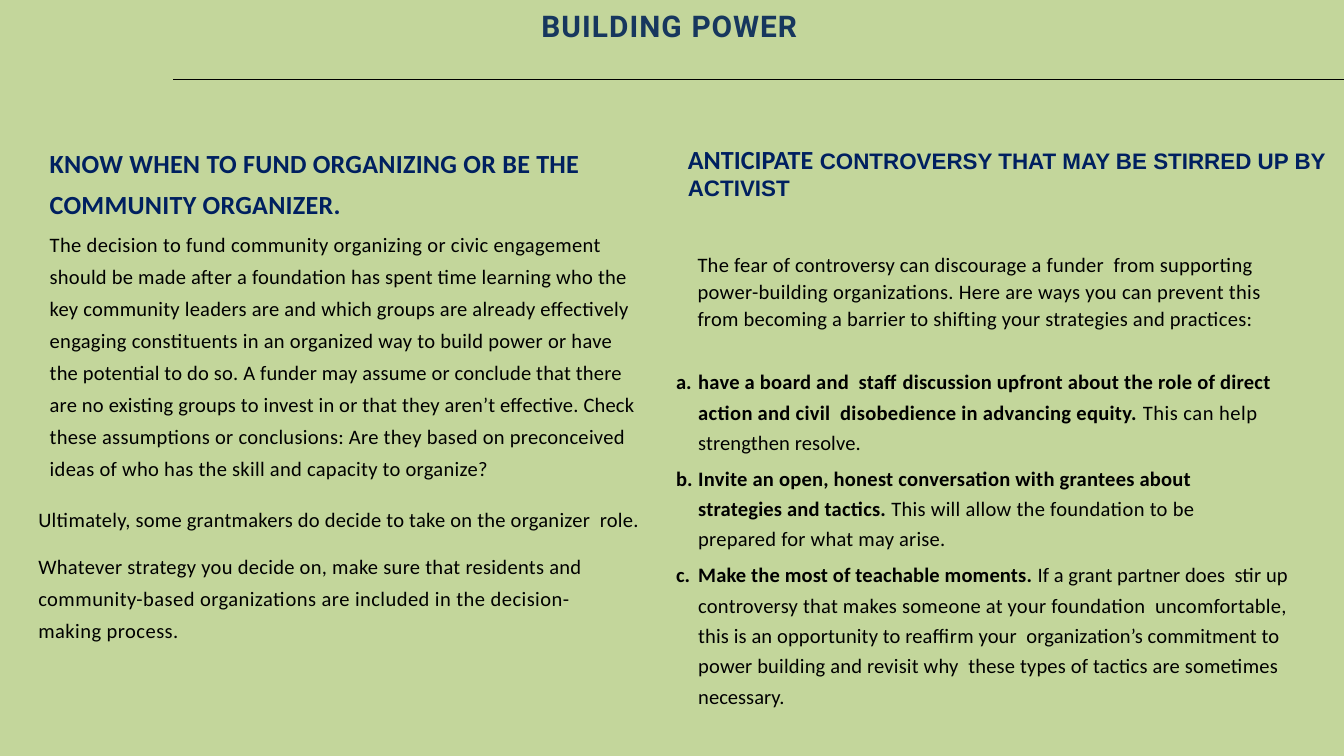
from dataclasses import dataclass
from typing import Optional

from lxml.etree import SubElement
from pptx import Presentation
from pptx.dml.color import RGBColor
from pptx.enum.shapes import MSO_CONNECTOR as Connector, MSO_SHAPE as Preset
from pptx.enum.text import MSO_AUTO_SIZE as AutoSize, PP_ALIGN as Align
from pptx.oxml.ns import qn
from pptx.util import Inches, Length, Pt

COLUMNS, ROWS = 100, 56.25
CELL = Inches(0.1)
COLORS = {
    "background": "C3D69B",
    "title": "17375E",
    "heading": "002060",
    "body": "000000",
}


@dataclass(frozen=True)
class Style:
    font: str
    size: float
    color: str
    bold: bool = False


@dataclass(frozen=True)
class Phrase:
    text: str
    spacing: float
    style: Style


@dataclass(frozen=True)
class TextParagraph:
    phrases: list[Phrase]
    line_spacing: float | Length = 1.0
    before: float = 0
    indent: float = 0.05
    hanging: float = 0
    right: float = 0
    lettered: bool = False


@dataclass(frozen=True)
class Block:
    column: float
    row: float
    columns: float
    rows: float
    paragraphs: list[TextParagraph]
    fill: Optional[str] = None
    inset: bool = False
    wrap: bool = True


TITLE = Style("Roboto", 16, "title", True)
HEADING = Style("Calibri", 14, "heading", True)
HEADING_SMALL = Style("Arial", 12, "heading", True)
BODY = Style("Calibri", 11, "body")
STRONG = Style("Calibri", 11, "body", True)


def body(*parts: tuple[str, float]) -> list[Phrase]:
    return [Phrase(text, spacing, BODY) for text, spacing in parts]


def strong(*parts: tuple[str, float]) -> list[Phrase]:
    return [Phrase(text, spacing, STRONG) for text, spacing in parts]


def lettered(phrases: list[Phrase], before: float = 3, right: float = 0) -> TextParagraph:
    return TextParagraph(phrases, 1.23, before, 1.75, -1.65, right, True)


BLOCKS = [
    Block(2.8, 37.1, 48, 2.3, [
        TextParagraph(body(
            ("Ultimately, some grantmakers do decide to take on the organizer  role.", 0.1),
        ), 1.3, 0.6),
    ]),
    Block(2.8, 40.6, 44.2, 7.2, [
        TextParagraph(body(
            ("Whatever strategy you decide on, make sure that residents and ", 0.13),
            ("community-based organizations are included in the decision- ", 0.23),
            ("making process.", 0.23),
        ), 1.3, 0.7, right=2),
    ]),
    Block(50.2, 26.95, 47.2, 25.8, [
        lettered(
            strong(
                ("have a board and  staff discussion upfront about the role of direct ", 0.1),
                ("action and civil  disobedience in advancing equity. ", 0.15),
            ) + body(("This can help ", 0.25), ("strengthen resolve.", 0.05)),
            before=0.7,
        ),
        lettered(
            strong(
                ("Invite an open, honest conversation with grantees about ", 0.1),
                ("strategies and tactics. ", 0.08),
            ) + body(
                ("This will allow the foundation to be ", 0.14),
                ("prepared for what may arise.", 0.1),
            ),
            right=5,
        ),
        lettered(
            strong(("Make the most of teachable moments. ", 0.05)) + body(
                ("If a grant partner does  stir up ", 0.03),
                ("controversy that makes someone at your foundation  uncomfortable, ", 0.1),
                ("this is an opportunity to reaffirm your  organization’s commitment to ", 0.07),
                ("power building and revisit why  these types of tactics are sometimes ", 0.09),
                ("necessary.", 0),
            ),
        ),
    ]),
    Block(1.8, 10.2, 46.1, 25.9, [
        TextParagraph([
            Phrase("KNOW WHEN TO FUND ORGANIZING OR BE THE COMMUNITY ORGANIZER.", 0.1, HEADING),
        ], 1.3, 2.5, 1.9),
        TextParagraph(body(
            ("The decision to fund community organizing or civic engagement ", 0.17),
            ("should be made after a foundation has spent time learning who the ", 0.1),
            ("key community leaders are and which groups are already effectively ", 0.11),
            ("engaging constituents in an organized way to build power or have ", 0.14),
            ("the potential to do so. A funder may assume or conclude that there ", 0.09),
            ("are no existing groups to invest in or that they aren’t effective. Check ", 0.09),
            ("these assumptions or conclusions: Are they based on preconceived ", 0.13),
            ("ideas of who has the skill and capacity to organize?", 0.15),
        ), 1.3, 2.5, 1.9, right=0.5),
    ]),
    Block(50, 18.5, 44.2, 6.1, [
        TextParagraph(body(
            ("The fear of controversy can discourage a funder  from supporting ", 0.11),
            ("power-building organizations. Here are ways you can prevent this ", 0.16),
            ("from becoming a barrier to shifting your strategies and practices:", 0.11),
        ), 1.09, 0.7, 1.9),
    ], fill="background"),
    Block(50.2, 10.15, 50, 5.4, [
        TextParagraph([
            Phrase("ANTICIPATE", 0, HEADING),
            Phrase(" CONTROVERSY THAT MAY BE STIRRED UP BY ACTIVIST", 0, HEADING_SMALL),
        ], indent=0),
    ], inset=True),
    Block(39.2, 1.25, 22, 2.8, [
        TextParagraph([
            Phrase("BUILDING ", 0.6, TITLE),
            Phrase("POWER", 0.5, TITLE),
        ], Pt(10.8), 0.7, 0.1),
    ], inset=True, wrap=False),
]


def cells(count: float) -> int:
    return round(count * CELL)


def color(name: str) -> RGBColor:
    return RGBColor.from_string(COLORS[name])


def add_phrase(paragraph, phrase: Phrase) -> None:
    run = paragraph.add_run()
    run.text = phrase.text
    run.font.name = phrase.style.font
    run.font.size = Pt(phrase.style.size)
    run.font.bold = phrase.style.bold
    run.font.color.rgb = color(phrase.style.color)
    run._r.get_or_add_rPr().set("spc", str(round(phrase.spacing * 100)))


def fill_paragraph(paragraph, content: TextParagraph) -> None:
    paragraph.alignment = Align.LEFT
    paragraph.line_spacing = content.line_spacing
    paragraph.space_before = Pt(content.before)
    properties = paragraph._p.get_or_add_pPr()
    properties.set("marL", str(cells(content.indent)))
    properties.set("marR", str(cells(content.right)))
    properties.set("indent", str(cells(content.hanging)))
    if content.lettered:
        SubElement(properties, qn("a:buAutoNum")).set("type", "alphaLcPeriod")
    for phrase in content.phrases:
        add_phrase(paragraph, phrase)


def add_block(slide, block: Block) -> None:
    place = [cells(n) for n in (block.column, block.row, block.columns, block.rows)]
    if block.fill:
        shape = slide.shapes.add_shape(Preset.RECTANGLE, *place)
        shape.shadow.inherit = False
        shape.fill.solid()
        shape.fill.fore_color.rgb = color(block.fill)
        shape.line.fill.background()
    else:
        shape = slide.shapes.add_textbox(*place)
    frame = shape.text_frame
    frame.word_wrap = block.wrap
    frame.auto_size = AutoSize.SHAPE_TO_FIT_TEXT
    if not block.inset:
        frame.margin_left = frame.margin_right = frame.margin_bottom = 0
        frame.margin_top = Inches(0.01)
    for index, content in enumerate(block.paragraphs):
        paragraph = frame.add_paragraph() if index else frame.paragraphs[0]
        fill_paragraph(paragraph, content)


def add_rule(slide, start: float, end: float, row: float) -> None:
    rule = slide.shapes.add_connector(
        Connector.STRAIGHT, cells(start), cells(row), cells(end), cells(row))
    rule.line.color.rgb = color("body")
    rule.line.width = Pt(0.5)
    SubElement(rule._element.spPr, qn("a:effectLst"))


def main() -> None:
    presentation = Presentation()
    presentation.slide_width = cells(COLUMNS)
    presentation.slide_height = cells(ROWS)
    slide = presentation.slides.add_slide(presentation.slide_layouts[6])
    slide.background.fill.solid()
    slide.background.fill.fore_color.rgb = color("background")
    add_rule(slide, 12.9, COLUMNS, 5.9)
    for block in BLOCKS:
        add_block(slide, block)
    presentation.save("out.pptx")


if __name__ == "__main__":
    main()
